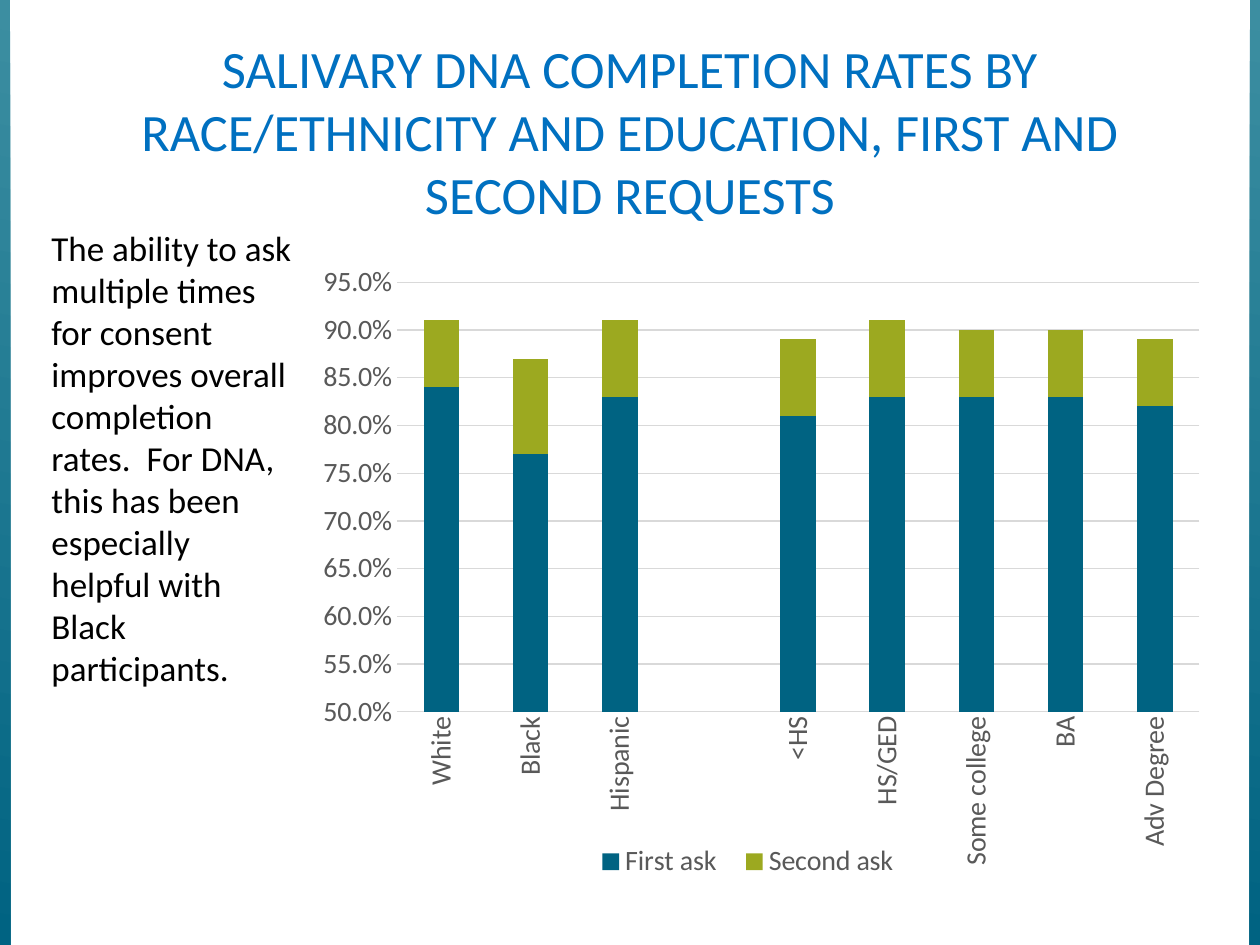
from lxml import etree
from pptx import Presentation
from pptx.chart.data import CategoryChartData
from pptx.dml.color import RGBColor
from pptx.enum.chart import XL_CHART_TYPE, XL_LEGEND_POSITION, XL_TICK_MARK
from pptx.enum.shapes import MSO_SHAPE
from pptx.enum.text import MSO_ANCHOR, PP_ALIGN
from pptx.oxml.ns import qn
from pptx.util import Inches, Pt

FONT = "Calibri"
GREY, GRID = "595959", "D9D9D9"
CHART_BOX = (2.42, 2, 7.25, 5.41)
CATEGORIES = ["White", "Black", "Hispanic", "", "<HS", "HS/GED",
              "Some college", "BA", "Adv Degree"]
SERIES = [
    ("First ask", "006382",
     [0.84, 0.77, 0.83, None, 0.81, 0.83, 0.83, 0.83, 0.82]),
    ("Second ask", "9CA920",
     [0.07, 0.1, 0.08, None, 0.08, 0.08, 0.07, 0.07, 0.07]),
]


def rgb(value):
    return RGBColor.from_string(value)


def set_font(font, size, color):
    font.name, font.size = FONT, Pt(size)
    font.color.rgb = rgb(color)


def set_line(line, color):
    line.color.rgb = rgb(color)
    line.width = Pt(0.75)


def add_side_bar(s, x):
    sp = s.shapes.add_shape(MSO_SHAPE.RECTANGLE, Inches(x), 0,
                            Inches(0.08), Inches(7.5))
    sp.shadow.inherit = False
    sp.line.fill.background()
    sp.fill.gradient()
    sp.fill.gradient_angle = 260
    for stop, color in zip(sp.fill.gradient_stops, ("3C8EA1", "006382")):
        stop.color.rgb = rgb(color)


def add_text(s, box, text, size, color, align=PP_ALIGN.LEFT):
    tf = s.shapes.add_textbox(*map(Inches, box)).text_frame
    tf.word_wrap = True
    tf.vertical_anchor = MSO_ANCHOR.TOP
    tf.text = text
    p = tf.paragraphs[0]
    p.alignment = align
    set_font(p.runs[0].font, size, color)


def make_layout(x, y, w, h, inner=False):
    """Return a manual chart layout from a box in inches."""
    layout = etree.Element(qn("c:layout"))
    manual = etree.SubElement(layout, qn("c:manualLayout"))
    width, height = CHART_BOX[2:]
    items = [("layoutTarget", "inner")] if inner else []
    items += [("xMode", "edge"), ("yMode", "edge"),
              ("x", x / width), ("y", y / height),
              ("w", w / width), ("h", h / height)]
    for tag, value in items:
        etree.SubElement(manual, qn(f"c:{tag}")).set("val", str(value))
    return layout


def style_axes(chart):
    cat, val = chart.category_axis, chart.value_axis
    for axis in (cat, val):
        axis.major_tick_mark = axis.minor_tick_mark = XL_TICK_MARK.NONE
        set_font(axis.tick_labels.font, 16, GREY)
    set_line(cat.format.line, GRID)
    cat._element.find(qn("c:txPr")).find(qn("a:bodyPr")).set("rot", "-5400000")
    val.minimum_scale, val.maximum_scale, val.major_unit = 0.5, 0.95, 0.05
    val.format.line.fill.background()
    set_line(val.major_gridlines.format.line, GRID)
    val.tick_labels.number_format = "0.0%"
    val.tick_labels.number_format_is_linked = False


def add_rate_chart(s):
    data = CategoryChartData(number_format="0.0%")
    data.categories = CATEGORIES
    for name, _, values in SERIES:
        data.add_series(name, values)
    chart = s.shapes.add_chart(XL_CHART_TYPE.COLUMN_STACKED,
                               *map(Inches, CHART_BOX), data).chart
    set_font(chart.font, 16, "000000")
    chart.has_title = False
    style_axes(chart)

    plot = chart.plots[0]
    plot.gap_width, plot.overlap, plot.vary_by_categories = 150, 100, False
    for series, (_, color, _) in zip(plot.series, SERIES):
        series.format.fill.solid()
        series.format.fill.fore_color.rgb = rgb(color)

    # Legend
    chart.has_legend = True
    legend = chart.legend
    legend.position = XL_LEGEND_POSITION.BOTTOM
    legend.include_in_layout = False
    set_font(legend.font, 16, GREY)

    # Fixed places for the plot and the legend
    area = chart._chartSpace.find(".//" + qn("c:plotArea"))
    for parent in (area, legend._element):
        for old in parent.findall(qn("c:layout")):
            parent.remove(old)
    area.insert(0, make_layout(0.73, 0.24, 6.37, 3.41, inner=True))
    legend._element.find(qn("c:legendPos")).addnext(
        make_layout(2.2, 4.65, 2.63, 0.38))


def main():
    prs = Presentation()
    prs.slide_width, prs.slide_height = Inches(10), Inches(7.5)
    s = prs.slides.add_slide(prs.slide_layouts[6])

    # Side bars
    for x in (0, 9.92):
        add_side_bar(s, x)

    # Title and comment
    add_text(s, (0.69, 0.24, 8.62, 0.51),
             "SALIVARY DNA COMPLETION RATES BY RACE/ETHNICITY AND EDUCATION, "
             "FIRST AND SECOND REQUESTS", 30, "0070C0", PP_ALIGN.CENTER)
    add_text(s, (0.31, 1.75, 2.13, 4.14),
             "The ability to ask multiple times for consent improves overall "
             "completion rates.  For DNA, this has been especially helpful "
             "with Black participants.", 20, "000000")

    # Completion rates
    add_rate_chart(s)
    prs.save("out.pptx")


if __name__ == "__main__":
    main()
